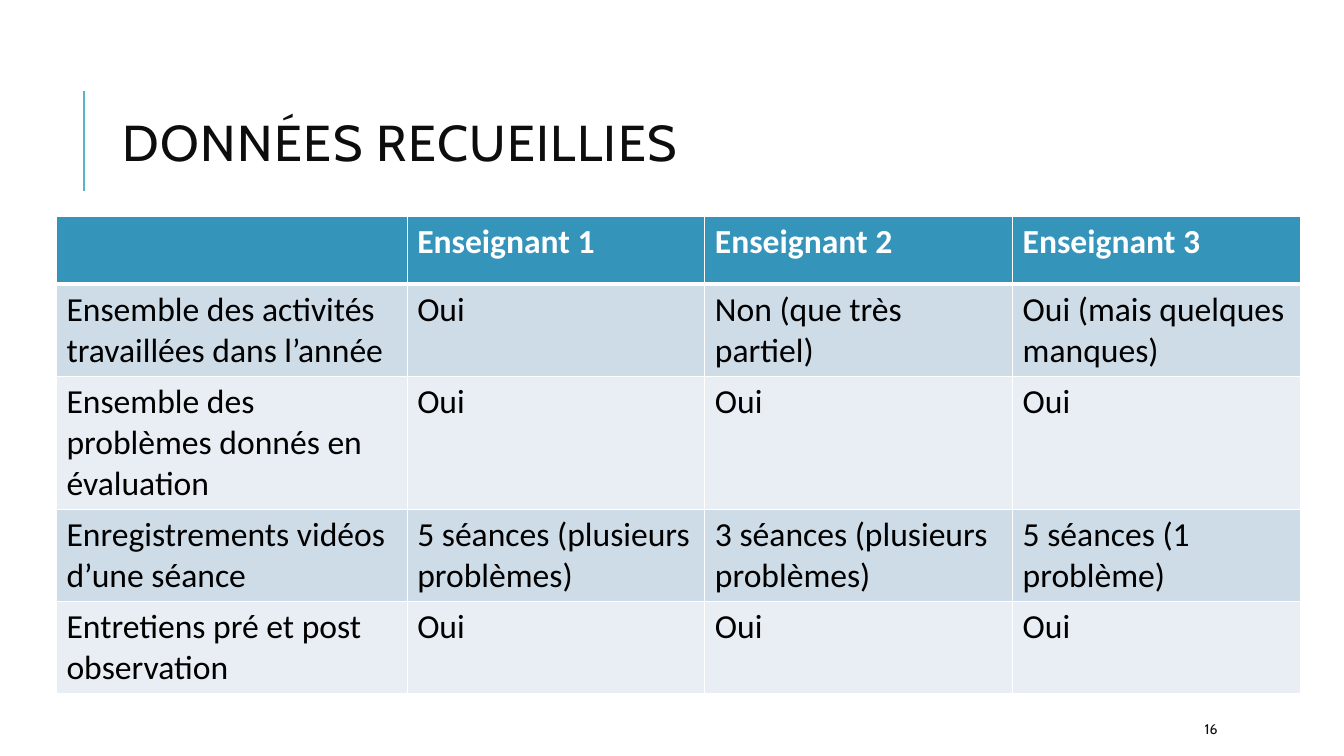
from lxml.etree import SubElement
from pptx import Presentation
from pptx.dml.color import RGBColor
from pptx.enum.shapes import MSO_CONNECTOR
from pptx.enum.text import MSO_ANCHOR, MSO_AUTO_SIZE, PP_ALIGN
from pptx.oxml.ns import qn
from pptx.util import Inches, Pt

COLORS = {"accent": "58B6C0", "header": "3494BA", "band": "CEDCE7",
          "light": "E8EEF3", "white": "FFFFFF", "ink": "0D0D0D", "black": "000000"}
FORMATS = {
    "title": {"name": "Cabin", "size": Pt(36), "color": "ink"},
    "number": {"name": "Cabin", "size": Pt(10), "color": "ink"},
    "header": {"name": "Calibri", "size": Pt(24), "bold": True, "color": "white"},
    "cell": {"name": "Calibri", "size": Pt(24), "bold": False, "color": "black"},
}
COL_WIDTHS = [26.1, 22.15, 22.9, 21.4]
ROW_HEIGHTS = [8.93, 12.13, 17.6, 12.13, 12.13]
ROWS = [
    ["", "Enseignant 1", "Enseignant 2", "Enseignant 3"],
    ["Ensemble des activités travaillées dans l’année", "Oui",
     "Non (que très partiel)", "Oui (mais quelques manques)"],
    ["Ensemble des problèmes donnés en évaluation", "Oui", "Oui", "Oui"],
    ["Enregistrements vidéos d’une séance", "5 séances (plusieurs problèmes)",
     "3 séances (plusieurs problèmes)", "5 séances (1 problème)"],
    ["Entretiens pré et post observation", "Oui", "Oui", "Oui"],
]


def rgb(name):
    return RGBColor.from_string(COLORS[name])


class SlideBuilder:
    """Places elements by percentages of the slide's width and height."""

    def __init__(self, prs):
        self.prs = prs
        self.slide = prs.slides.add_slide(prs.slide_layouts[5])

    def x(self, share):
        return round(self.prs.slide_width * share / 100)

    def y(self, share):
        return round(self.prs.slide_height * share / 100)

    def box(self, left, top, width, height):
        return self.x(left), self.y(top), self.x(width), self.y(height)

    def add_words(self, tf, text, style):
        p = tf.paragraphs[0]
        p.alignment = PP_ALIGN.LEFT
        r = p.add_run()
        r.text = text
        for key, value in FORMATS[style].items():
            if key == "color":
                r.font.color.rgb = rgb(value)
            else:
                setattr(r.font, key, value)
        return p, r

    def frame(self, sp):
        tf = sp.text_frame
        for key, value in {"word_wrap": True, "auto_size": MSO_AUTO_SIZE.NONE,
                           "vertical_anchor": MSO_ANCHOR.MIDDLE}.items():
            setattr(tf, key, value)
        return tf

    def title(self, text, *area):
        sp = self.slide.shapes.title
        sp.left, sp.top, sp.width, sp.height = self.box(*area)
        p, r = self.add_words(self.frame(sp), text, "title")
        p.line_spacing = 0.8
        r._r.get_or_add_rPr().set("spc", "100")

    def text(self, text, style, *area):
        sp = self.slide.shapes.add_textbox(*self.box(*area))
        self.add_words(self.frame(sp), text, style)

    def line(self, x1, y1, x2, y2, color, width):
        line = self.slide.shapes.add_connector(
            MSO_CONNECTOR.STRAIGHT, self.x(x1), self.y(y1), self.x(x2), self.y(y2))
        line.line.color.rgb = rgb(color)
        line.line.width = Pt(width)
        SubElement(line._element.spPr, qn("a:effectLst"))

    def border(self, cell, side, width):
        ln = SubElement(cell._tc.get_or_add_tcPr(), qn(f"a:ln{side}"), w=str(Pt(width)))
        fill = SubElement(ln, qn("a:solidFill"))
        SubElement(fill, qn("a:srgbClr"), val=COLORS["white"])

    def table(self, rows, left, top, widths, heights):
        area = self.box(left, top, sum(widths), sum(heights))
        table = self.slide.shapes.add_table(len(rows), len(widths), *area).table
        for column, width in zip(table.columns, widths):
            column.width = self.x(width)
        for row, height in zip(table.rows, heights):
            row.height = self.y(height)
        for i, texts in enumerate(rows):
            fill = "header" if i == 0 else "band" if i % 2 else "light"
            for j, text in enumerate(texts):
                cell = table.cell(i, j)
                thick = {"T": i == 1, "B": i == 0}
                for side in "LRTB":
                    self.border(cell, side, 3 if thick.get(side) else 1)
                cell.fill.solid()
                cell.fill.fore_color.rgb = rgb(fill)
                if text:
                    self.add_words(cell.text_frame, text, "cell" if i else "header")


def main():
    prs = Presentation()
    prs.slide_width, prs.slide_height = Inches(13.33), Inches(7.5)
    s = SlideBuilder(prs)
    s.line(6.25, 25.33, 6.25, 12, "accent", 1.5)
    s.title("DONNÉES RECUEILLIES", 8.4, 8.53, 79.75, 21.87)
    s.table(ROWS, 4.2, 28.67, COL_WIDTHS, ROW_HEIGHTS)
    s.text("16", "number", 88.9, 94.4, 7.95, 4)
    prs.save("out.pptx")


if __name__ == "__main__":
    main()
